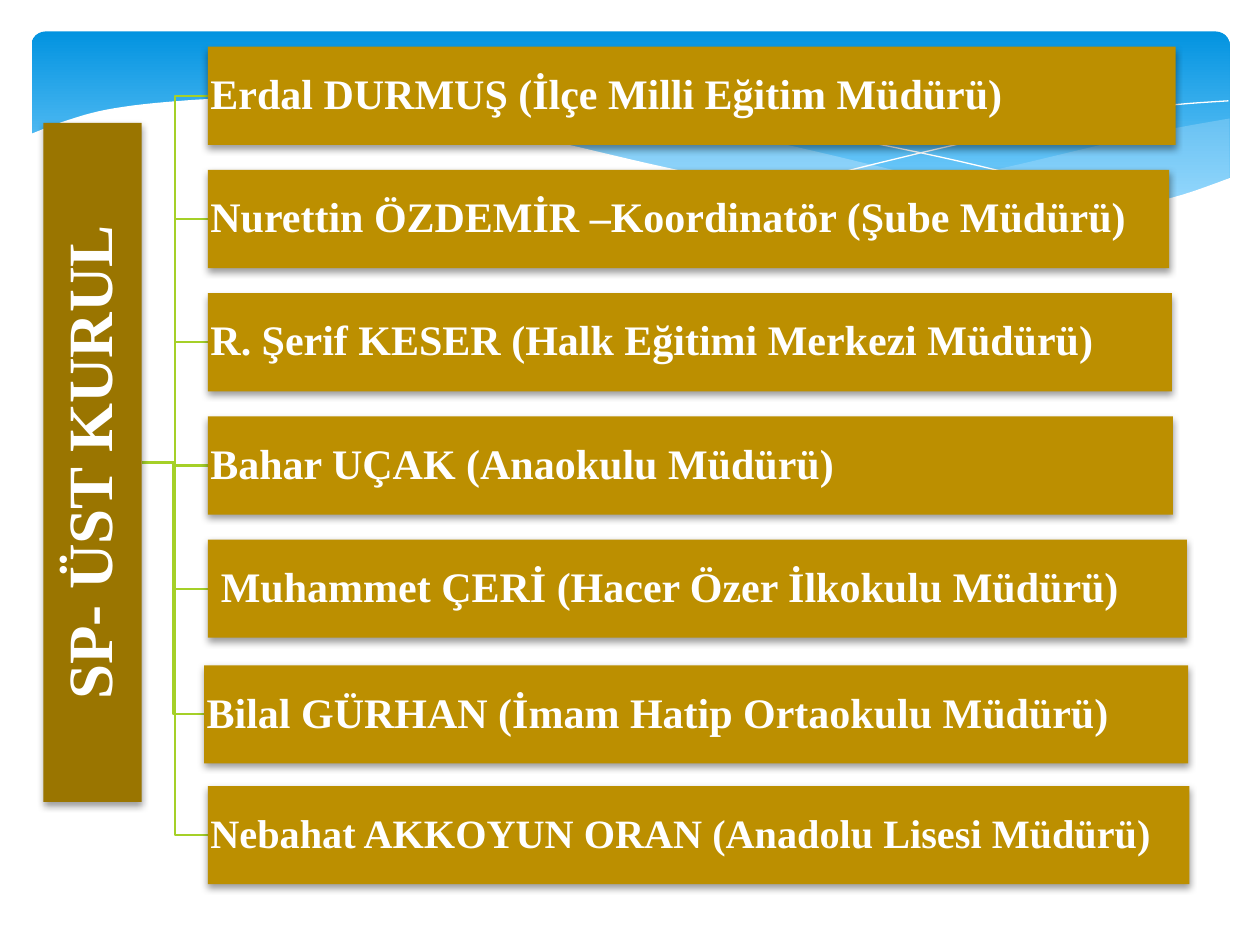
from itertools import chain
from lxml.etree import SubElement
from pptx import Presentation
from pptx.dml.color import RGBColor
from pptx.enum.shapes import MSO_CONNECTOR, MSO_SHAPE
from pptx.enum.text import MSO_ANCHOR, MSO_AUTO_SIZE, PP_ALIGN
from pptx.oxml.ns import qn
from pptx.util import Emu, Inches, Pt

COLORS = {
    "sky": "0293E0", "haze": "83D3FE", "wave": "C6E7FC", "white": "FFFFFF",
    "branch": "A5D028", "board": "9A7500", "member": "BC8F00",
}
FONT = "Times New Roman"
COLUMNS, ROWS = 100, 75
STEPS = 6

FIRST_TOP, PITCH, BOX_HEIGHT = 3.7, 9.78, 7.8
MEMBER_LEFT = 16.5
BOARD_EDGE, BOARD_MIDDLE = 11.3, 36.7
MEMBERS = [
    ("Erdal DURMUŞ (İlçe Milli Eğitim Müdürü)", 76.8, {}),
    ("Nurettin ÖZDEMİR –Koordinatör (Şube Müdürü)", 76.3, {}),
    ("R. Şerif KESER (Halk Eğitimi Merkezi Müdürü)", 76.5, {}),
    ("Bahar UÇAK (Anaokulu Müdürü)", 76.6, {}),
    (" Muhammet ÇERİ (Hacer Özer İlkokulu Müdürü)", 77.7, {}),
    ("Bilal GÜRHAN (İmam Hatip Ortaokulu Müdürü)", 78.1, {"dx": -0.3, "dy": 0.2}),
    ("Nebahat AKKOYUN ORAN (Anadolu Lisesi Müdürü)", 77.9, {"size": 23}),
]

RIGHT_WAVE = [
    [(97.6, 9.4), (92.1, 10.4), (86.1, 11.8), (77.9, 13.7), (66.1, 16)],
    [(66.1, 16), (73.2, 16.8), (80.3, 17.2), (87.2, 16.9), (92.8, 15.8), (97.6, 14.1)],
]
LONG_WAVE = [
    [(89.3, 16.7), (83.7, 15.9), (74.1, 14.2), (62.9, 11.6), (52.8, 9.5),
     (44.2, 8.3), (36.1, 8), (28.6, 8.6)],
    [(28.6, 8.6), (36.2, 9.7), (44.9, 11.6), (56.6, 14.3), (66.5, 16.1),
     (74.8, 17), (82.8, 17.3), (89.3, 16.7)],
]
FALLING_LINE = [[(30.9, 9), (34.4, 8.4), (41.6, 8.1), (48.9, 8.4), (58.2, 9.4),
                 (69.5, 11.4), (79.5, 13.6), (90.7, 16.6)]]
RISING_LINE = [[(61.3, 15.1), (69.5, 13), (77.6, 11.1), (86.6, 9.3), (92.4, 8.4), (97.5, 8)]]
WHITE_WAVE = [
    [(97.7, 14.1), (93, 15.7), (87.5, 16.7), (80.9, 17.1), (72.6, 16.7),
     (62.6, 15.3), (52.9, 13.3), (44.7, 11.4), (36.5, 9.6), (27.1, 8.2),
     (19.3, 7.8), (13.2, 8.1), (8.5, 8.7), (5.2, 9.6), (2.3, 10.7)],
    [(2.3, 22.4), (97.7, 22.4)],
]


def smooth(knots):
    padded = [knots[0], *knots, knots[-1]]
    curve = [knots[0]]
    for a, b, c, d in zip(padded, padded[1:], padded[2:], padded[3:]):
        for step in range(1, STEPS + 1):
            t = step / STEPS
            curve.append(tuple(
                0.5 * (2 * q + (r - p) * t + (2 * p - 5 * q + 4 * r - s) * t**2
                       + (3 * q - p - 3 * r + s) * t**3)
                for p, q, r, s in zip(a, b, c, d)))
    return curve


def assign(target, values):
    for name, value in values.items():
        setattr(target, name, value)


class Board:
    def __init__(self):
        self.deck = Presentation()
        assign(self.deck, {"slide_width": Inches(10), "slide_height": Inches(7.5)})
        self.slide = self.deck.slides.add_slide(self.deck.slide_layouts[5])
        self.shapes = self.slide.shapes

    def x(self, columns):
        return Emu(round(self.deck.slide_width * columns / COLUMNS))

    def y(self, rows):
        return Emu(round(self.deck.slide_height * rows / ROWS))

    def color(self, name):
        return RGBColor.from_string(COLORS[name])

    def paint(self, shape, color):
        shape.fill.solid()
        shape.fill.fore_color.rgb = self.color(color)
        shape.line.fill.background()

    def cast_shadow(self, shape):
        shape.shadow.inherit = False
        effects = shape._element.spPr.find(qn("a:effectLst"))
        shadow = SubElement(effects, qn("a:outerShdw"), blurRad="50800", dist="25400",
                            dir="5400000", algn="ctr", rotWithShape="0")
        black = SubElement(shadow, qn("a:srgbClr"), val="000000")
        SubElement(black, qn("a:alpha"), val="38000")

    def sky(self, left, top, width, height):
        sky = self.shapes.add_shape(MSO_SHAPE.ROUNDED_RECTANGLE, self.x(left), self.y(top),
                                    self.x(width), self.y(height))
        sky.adjustments[0] = 0.071
        sky.shadow.inherit = False
        sky.line.fill.background()
        sky.fill.gradient()
        sky.fill.gradient_angle = 270
        for stop, color, position in zip(sky.fill.gradient_stops, ("sky", "haze"), (0, 0.9)):
            stop.color.rgb = self.color(color)
            stop.position = position

    def curve(self, strokes, closed):
        points = [(self.x(x), self.y(y)) for x, y in chain.from_iterable(map(smooth, strokes))]
        builder = self.shapes.build_freeform(*points[0])
        builder.add_line_segments(points[1:], close=closed)
        curve = builder.convert_to_shape()
        curve.shadow.inherit = False
        return curve

    def wave(self, strokes, color, opacity=100):
        wave = self.curve(strokes, True)
        self.paint(wave, color)
        tint = wave._element.spPr.find(qn("a:solidFill"))[0]
        SubElement(tint, qn("a:alpha"), val=str(opacity * 1000))

    def hairline(self, strokes):
        hairline = self.curve(strokes, False)
        hairline.fill.background()
        hairline.line.color.rgb = self.color("white")
        hairline.line.width = Pt(0)

    def branch(self, end_x, end_y):
        branch = self.shapes.add_connector(MSO_CONNECTOR.ELBOW, self.x(BOARD_EDGE),
                                           self.y(BOARD_MIDDLE), self.x(end_x), self.y(end_y))
        branch.line.color.rgb = self.color("branch")
        branch.line.width = Pt(1.25)
        SubElement(branch._element.spPr, qn("a:effectLst"))

    def letter(self, shape, text, size, align, inset):
        frame = shape.text_frame
        margins = {f"margin_{side}": Inches(inset) for side in ("left", "right", "top", "bottom")}
        assign(frame, {"text": text, "word_wrap": True, "auto_size": MSO_AUTO_SIZE.NONE,
                       "vertical_anchor": MSO_ANCHOR.MIDDLE, **margins})
        paragraph = frame.paragraphs[0]
        assign(paragraph, {"alignment": align, "line_spacing": 0.9})
        font = paragraph.runs[0].font
        assign(font, {"name": FONT, "size": Pt(size), "bold": True})
        font.color.rgb = self.color("white")

    def title(self, text, left, top, width, height):
        title = self.shapes.title
        assign(title, {"left": self.x(left), "top": self.y(top), "width": self.x(width),
                       "height": self.y(height), "rotation": 270})
        self.shapes._spTree.append(title._element)
        self.paint(title, "board")
        self.cast_shadow(title)
        self.letter(title, text, 36, PP_ALIGN.CENTER, 0.03)

    def member(self, text, left, top, width, size):
        member = self.shapes.add_shape(MSO_SHAPE.RECTANGLE, self.x(left), self.y(top),
                                       self.x(width), self.y(BOX_HEIGHT))
        self.paint(member, "member")
        self.cast_shadow(member)
        self.letter(member, text, size, PP_ALIGN.LEFT, 0.02)


def main():
    board = Board()
    board.sky(2.5, 2.5, 95.1, 15.6)
    board.wave(RIGHT_WAVE, "wave", 29)
    board.wave(LONG_WAVE, "wave", 40)
    board.hairline(FALLING_LINE)
    board.hairline(RISING_LINE)
    board.wave(WHITE_WAVE, "white")

    places = [(MEMBER_LEFT + options.get("dx", 0), FIRST_TOP + row * PITCH + options.get("dy", 0))
              for row, (_, _, options) in enumerate(MEMBERS)]
    for left, top in reversed(places):
        board.branch(left, top + BOX_HEIGHT / 2)
    board.title("SP- ÜST KURUL", -19.6, 32.8, 53.9, BOX_HEIGHT)
    for (text, width, options), (left, top) in zip(MEMBERS, places):
        board.member(text, left, top, width, options.get("size", 24))
    board.deck.save("out.pptx")


if __name__ == "__main__":
    main()
